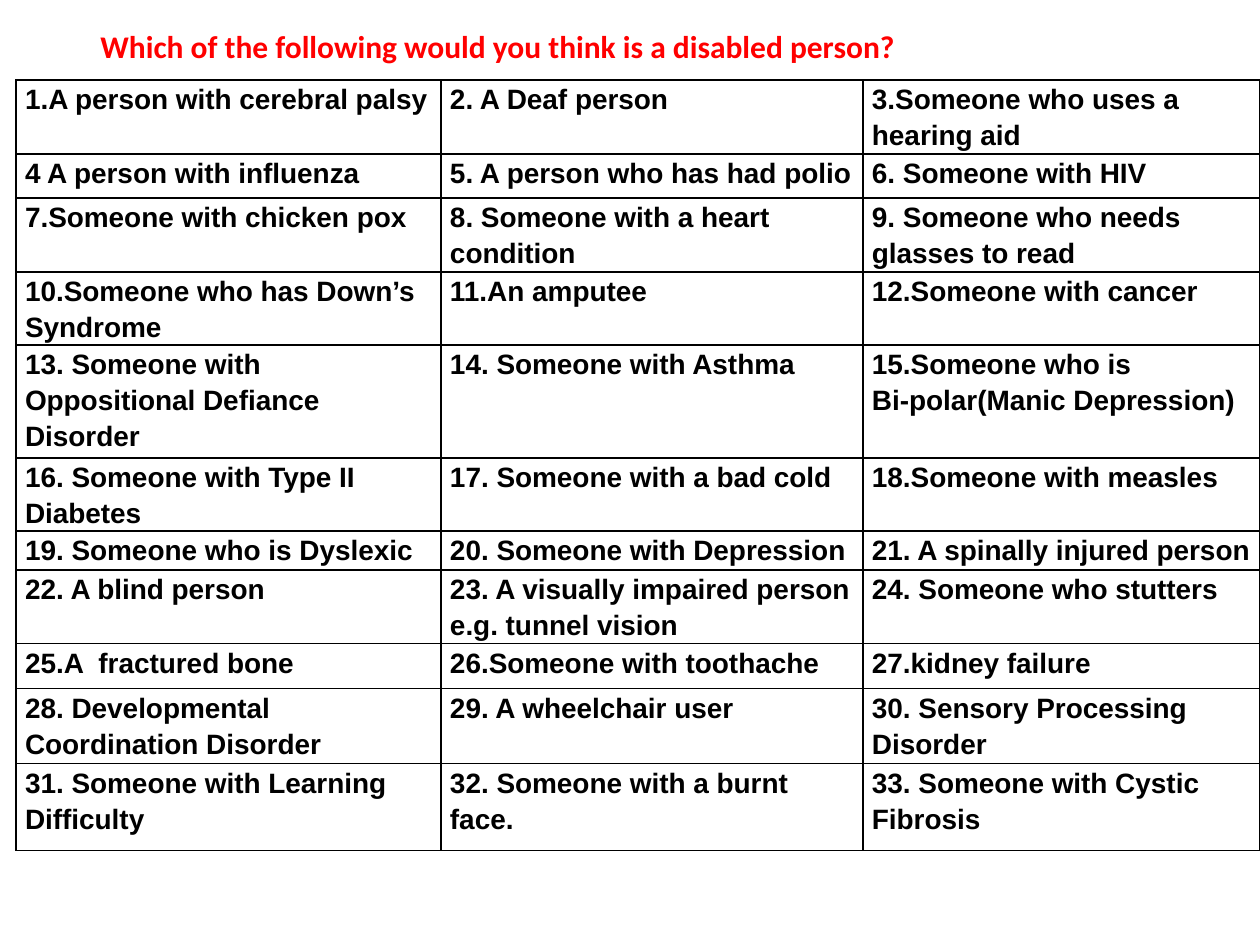
"""Build a slide with a question above a three-column table of conditions."""
import pptx
import pptx.dml.color
import pptx.oxml
import pptx.oxml.ns
import pptx.util

THEME = {
    "title_font": "Calibri", "title_size": 18, "title_color": "FF0000",
    "cell_font": "Arial", "cell_size": 16, "cell_color": "000000",
    "cell_fill": "FFFFFF", "border_color": "000000", "border_pt": 1,
}
PX = 914400 / 126
COLUMNS = [425, 422, 397]
ROWS = [
    (74, "1.A person with cerebral palsy", "2. A Deaf person", "3.Someone who uses a hearing aid"),
    (44, "4 A person with influenza", "5. A person who has had polio", "6. Someone with HIV"),
    (74, "7.Someone with chicken pox", "8. Someone with a heart condition", "9. Someone who needs glasses to read"),
    (73, "10.Someone who has Down’s Syndrome", "11.An amputee", "12.Someone with cancer"),
    (113, "13. Someone with Oppositional Defiance Disorder", "14. Someone with Asthma",
     "15.Someone who is\nBi-polar(Manic Depression)"),
    (73, "16. Someone with Type II Diabetes", "17. Someone with a bad cold", "18.Someone with measles"),
    (39, "19. Someone who is Dyslexic", "20. Someone with Depression", "21. A spinally injured person"),
    (74, "22. A blind person", "23. A visually impaired person e.g. tunnel vision", "24. Someone who stutters"),
    (45, "25.A  fractured bone", "26.Someone with toothache", "27.kidney failure"),
    (75, "28. Developmental Coordination Disorder", "29. A wheelchair user", "30. Sensory Processing Disorder"),
    (87, "31. Someone with Learning Difficulty", "32. Someone with a burnt face.", "33. Someone with Cystic Fibrosis"),
]


def px(n):
    return pptx.util.Emu(round(n * PX))


def style(p, role):
    p.font.name = THEME[role + "_font"]
    p.font.size = pptx.util.Pt(THEME[role + "_size"])
    p.font.bold = True
    p.font.color.rgb = pptx.dml.color.RGBColor.from_string(THEME[role + "_color"])


prs = pptx.Presentation()
prs.slide_width, prs.slide_height = px(1260), px(945)
s = prs.slides.add_slide(prs.slide_layouts[6])

heights = [row[0] for row in ROWS]
frame = s.shapes.add_table(len(ROWS), len(COLUMNS), px(16), px(80), px(sum(COLUMNS)), px(sum(heights)))
table = frame.table
table.first_row = False
table.horz_banding = False
for column, width in zip(table.columns, COLUMNS):
    column.width = px(width)

for i, (height, *texts) in enumerate(ROWS):
    table.rows[i].height = px(height)
    for j, text in enumerate(texts):
        cell = table.cell(i, j)
        cell.text = text
        cell.margin_left = cell.margin_right = px(9)
        cell.margin_top = cell.margin_bottom = 0
        cell.fill.solid()
        cell.fill.fore_color.rgb = pptx.dml.color.RGBColor.from_string(THEME["cell_fill"])
        for p in cell.text_frame.paragraphs:
            p.line_spacing = 1.15
            style(p, "cell")
        tcPr = cell._tc.get_or_add_tcPr()
        for k, side in enumerate(("lnL", "lnR", "lnT", "lnB")):
            tcPr.insert(k, pptx.oxml.parse_xml(
                f'<a:{side} {pptx.oxml.ns.nsdecls("a")} w="{pptx.util.Pt(THEME["border_pt"])}">'
                f'<a:solidFill><a:srgbClr val="{THEME["border_color"]}"/></a:solidFill></a:{side}>'))

title = s.shapes.add_textbox(px(88), px(21), px(1118), px(89))
tf = title.text_frame
tf.word_wrap = True
p = tf.paragraphs[0]
p.text = "Which of the following would you think is a disabled person?"
style(p, "title")

prs.save("out.pptx")
